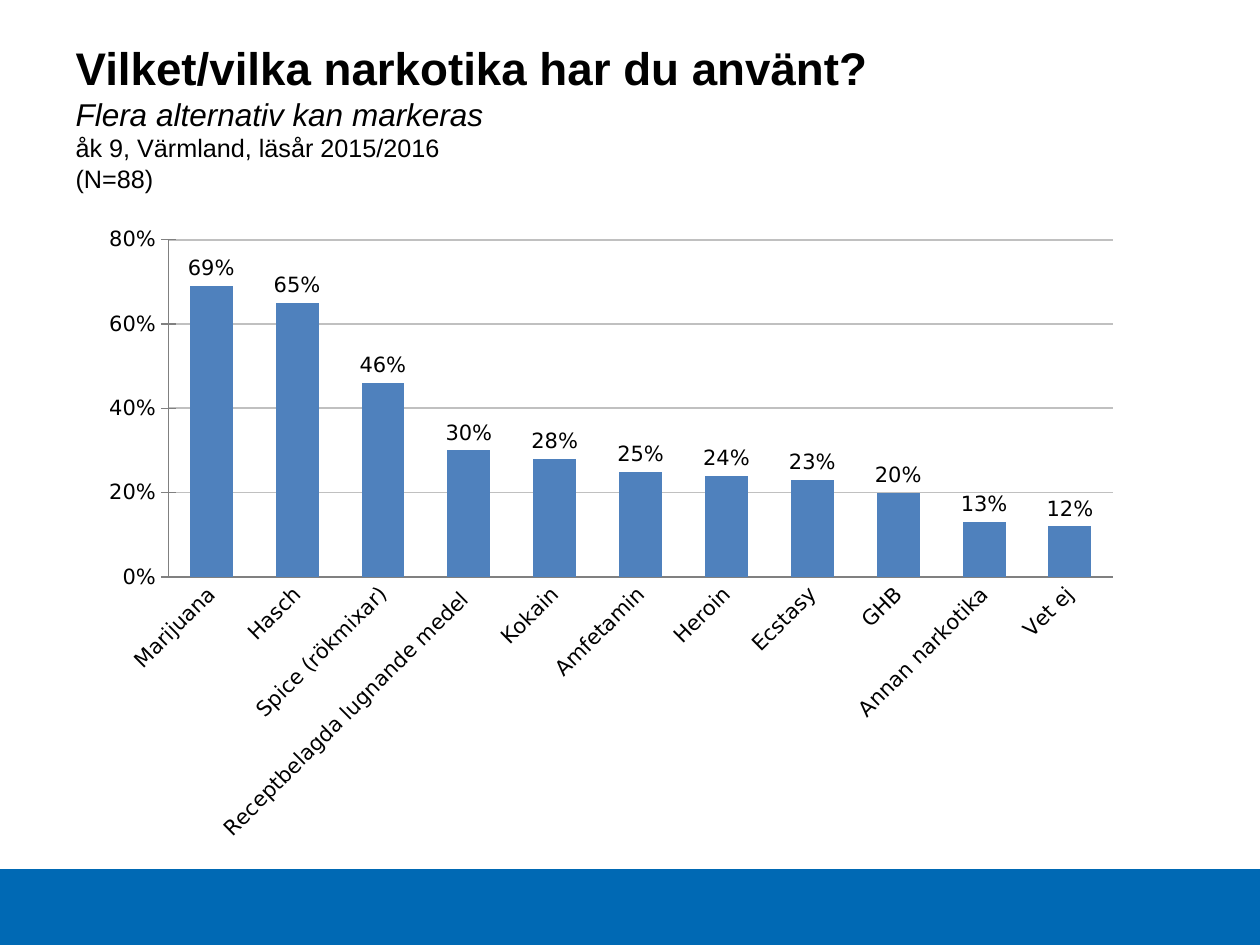
from lxml.etree import SubElement
from pptx import Presentation
from pptx.chart.data import CategoryChartData
from pptx.dml.color import RGBColor
from pptx.enum.chart import XL_CHART_TYPE, XL_LABEL_POSITION, XL_TICK_MARK
from pptx.enum.shapes import MSO_SHAPE
from pptx.enum.text import MSO_ANCHOR, MSO_AUTO_SIZE, PP_ALIGN
from pptx.oxml.ns import qn
from pptx.util import Cm, Pt

BLACK = RGBColor(0x00, 0x00, 0x00)
BAND_BLUE = RGBColor(0x00, 0x69, 0xB4)
BAR_BLUE = RGBColor(0x4F, 0x81, 0xBD)
GRID_GREY = RGBColor(0xC0, 0xC0, 0xC0)
AXIS_GREY = RGBColor(0x80, 0x80, 0x80)

# Each title part: its lines and its format
TITLE_PARTS = [
    (["Vilket/vilka narkotika har du använt?"],
     {"size": Pt(26.1), "bold": True, "italic": False}),
    (["Flera alternativ kan markeras"],
     {"size": Pt(18), "bold": False, "italic": True}),
    (["åk 9, Värmland, läsår 2015/2016", "(N=88)"],
     {"size": Pt(14.4), "bold": False, "italic": False}),
]

DRUG_SHARES = {
    "Marijuana": 0.69,
    "Hasch": 0.65,
    "Spice (rökmixar)": 0.46,
    "Receptbelagda lugnande medel ": 0.30,
    "Kokain": 0.28,
    "Amfetamin": 0.25,
    "Heroin": 0.24,
    "Ecstasy": 0.23,
    "GHB": 0.20,
    "Annan narkotika": 0.13,
    "Vet ej": 0.12,
}
PLOT_AREA = {"x": 0.08, "y": 0.04, "w": 0.9, "h": 0.53}
CHART_TEXT = {"name": "DejaVu Sans", "size": Pt(12)}


def format_font(font, values):
    for attribute, value in values.items():
        setattr(font, attribute, value)
    font.color.rgb = BLACK


def add_band(slide):
    band = slide.shapes.add_shape(
        MSO_SHAPE.RECTANGLE, Cm(0), Cm(17.52), Cm(25.4), Cm(1.53))
    band.shadow.inherit = False
    band.fill.solid()
    band.fill.fore_color.rgb = BAND_BLUE
    band.line.fill.background()


def fill_title(title):
    title.left, title.top = Cm(1.27), Cm(0.76)
    title.width, title.height = Cm(22), Cm(3.18)
    frame = title.text_frame
    frame.word_wrap = True
    frame.auto_size = MSO_AUTO_SIZE.NONE
    frame.vertical_anchor = MSO_ANCHOR.MIDDLE
    heading = frame.paragraphs[0]
    heading.alignment = PP_ALIGN.LEFT
    lines = [(line, style) for group, style in TITLE_PARTS for line in group]
    for number, (line, style) in enumerate(lines):
        if number:
            heading.add_line_break()
        run = heading.add_run()
        run.text = line
        format_font(run.font, {"name": "Arial", **style})


def place_plot_area(chart):
    plot_area = chart._chartSpace.chart.plotArea
    layout = plot_area.find(qn("c:layout"))
    if layout is None:
        layout = SubElement(plot_area, qn("c:layout"))
        plot_area.insert(0, layout)
    manual = SubElement(layout, qn("c:manualLayout"))
    settings = {"layoutTarget": "inner", "xMode": "edge", "yMode": "edge", **PLOT_AREA}
    for tag, value in settings.items():
        SubElement(manual, qn(f"c:{tag}")).set("val", str(value))


def format_axes(chart):
    drugs, shares = chart.category_axis, chart.value_axis
    for axis, tick in ((drugs, XL_TICK_MARK.NONE), (shares, XL_TICK_MARK.CROSS)):
        axis.major_tick_mark = tick
        axis.minor_tick_mark = XL_TICK_MARK.NONE
        axis.format.line.color.rgb = AXIS_GREY
        axis.format.line.width = Pt(0.75)
        format_font(axis.tick_labels.font, CHART_TEXT)
    # Slanted category names
    drugs._element.txPr.bodyPr.set("rot", "-2700000")

    scale = {"minimum_scale": 0, "maximum_scale": 0.8, "major_unit": 0.2,
             "has_major_gridlines": True}
    for attribute, value in scale.items():
        setattr(shares, attribute, value)
    shares.tick_labels.number_format = "0%"
    shares.tick_labels.number_format_is_linked = False
    grid = shares.major_gridlines.format.line
    grid.color.rgb = GRID_GREY
    grid.width = Pt(1)


def format_bars(plot):
    plot.gap_width = 100
    plot.vary_by_categories = False
    bars = plot.series[0].format
    bars.fill.solid()
    bars.fill.fore_color.rgb = BAR_BLUE
    plot.has_data_labels = True
    labels = plot.data_labels
    settings = {"show_value": True, "number_format": "0%",
                "number_format_is_linked": False,
                "position": XL_LABEL_POSITION.OUTSIDE_END}
    for attribute, value in settings.items():
        setattr(labels, attribute, value)
    format_font(labels.font, CHART_TEXT)


def add_drug_chart(slide):
    answers = CategoryChartData(number_format="0%")
    answers.categories = list(DRUG_SHARES)
    answers.add_series("Series 1", list(DRUG_SHARES.values()))
    chart = slide.shapes.add_chart(
        XL_CHART_TYPE.COLUMN_CLUSTERED, Cm(1.7), Cm(4.32), Cm(21.16), Cm(12.83),
        answers).chart
    chart.has_legend = False
    chart.has_title = False
    format_font(chart.font, {"name": "Arial", "size": Pt(18)})
    place_plot_area(chart)
    format_axes(chart)
    format_bars(chart.plots[0])


def main():
    presentation = Presentation()
    presentation.slide_width, presentation.slide_height = Cm(25.4), Cm(19.05)
    slide = presentation.slides.add_slide(presentation.slide_layouts[5])
    add_band(slide)
    fill_title(slide.shapes.title)
    add_drug_chart(slide)
    presentation.save("out.pptx")


if __name__ == "__main__":
    main()
